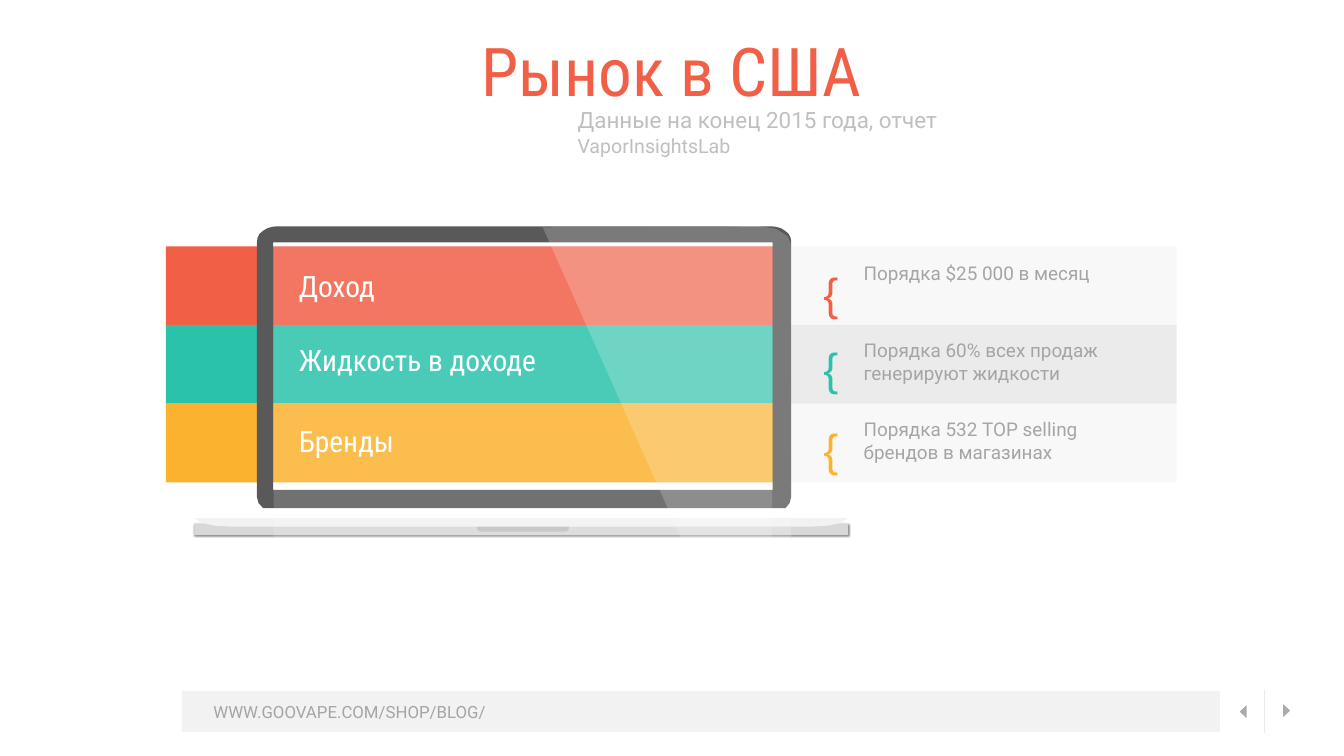
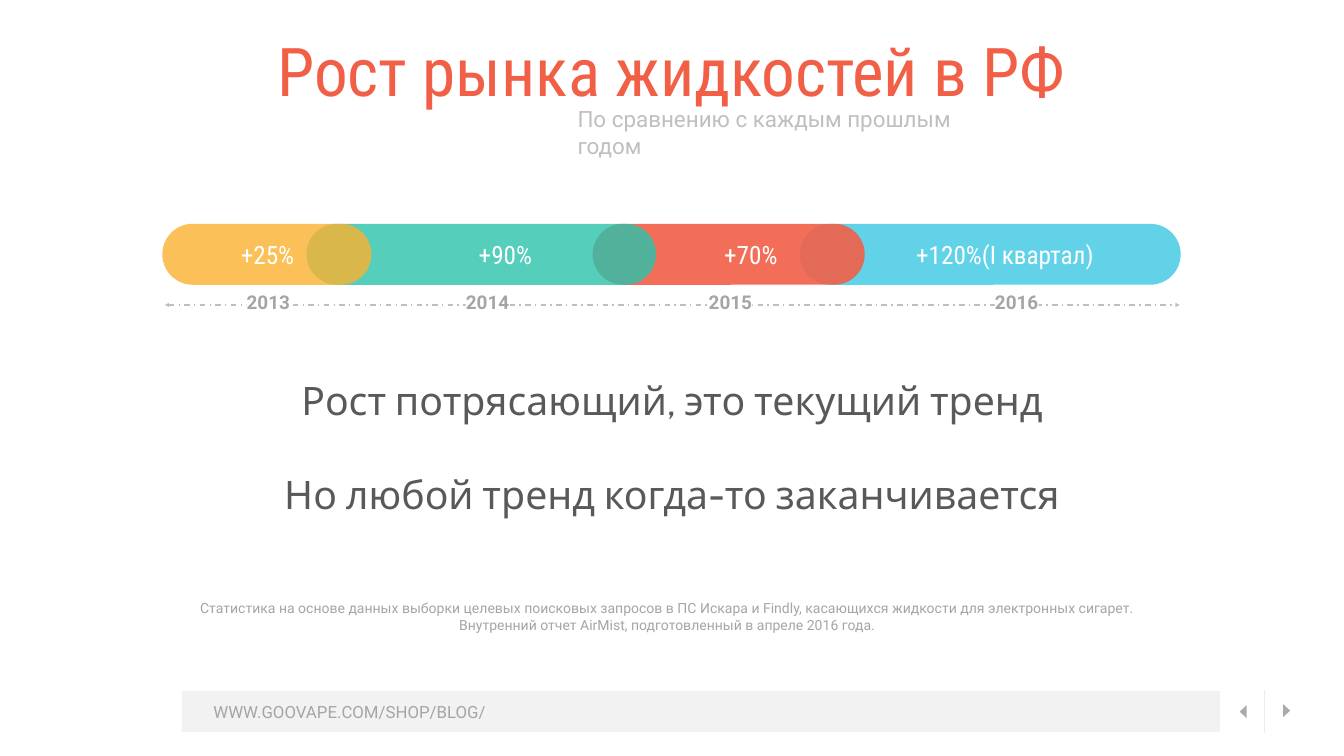
import math

from lxml import etree
from pptx import Presentation
from pptx.dml.color import RGBColor
from pptx.enum.dml import MSO_LINE
from pptx.enum.shapes import MSO_CONNECTOR, MSO_SHAPE
from pptx.enum.text import MSO_ANCHOR, PP_ALIGN
from pptx.oxml.ns import qn
from pptx.util import Inches, Pt

RECT = MSO_SHAPE.RECTANGLE
PILL = MSO_SHAPE.ROUNDED_RECTANGLE
OVAL = MSO_SHAPE.OVAL
TRIANGLE = MSO_SHAPE.ISOSCELES_TRIANGLE
NOTCH = MSO_SHAPE.ROUND_2_SAME_RECTANGLE
STRAIGHT = MSO_CONNECTOR.STRAIGHT
DASH_DOT = MSO_LINE.DASH_DOT
LEFT, CENTER = PP_ALIGN.LEFT, PP_ALIGN.CENTER
TOP, MIDDLE = MSO_ANCHOR.TOP, MSO_ANCHOR.MIDDLE


class Theme:
    coral, teal, amber, sky = "F15F47", "2BC2AC", "FBB22F", "3AC7E2"
    white, pale, silver, mist = "FFFFFF", "F2F2F2", "D8D8D8", "E6E6E6"
    rule, arrow, soft, muted, dark = "EBEBEB", "AAAAAA", "BFBFBF", "A5A5A5", "595959"
    camera = "A4A6A8"
    body, condensed, statement, symbol = "Roboto", "Roboto Condensed", "Cabin", "Arial"
    title_size, brace_size, statement_size = 96, 64, 56
    label_size, growth_size, subtitle_size, source_size = 42, 36, 32, 28
    detail_size, footer_size, note_size = 27, 24, 20


def paint(shape, color, opacity=100):
    """Give a shape a flat fill without outline or shadow; opacity is in percent."""
    shape.shadow.inherit = False
    shape.line.fill.background()
    shape.fill.solid()
    shape.fill.fore_color.rgb = RGBColor.from_string(color)
    if opacity < 100:
        tint = shape._element.spPr.find(".//" + qn("a:srgbClr"))
        etree.SubElement(tint, qn("a:alpha")).set("val", str(opacity * 1000))
    return shape


def write(shape, paragraphs, color, font=Theme.body, align=LEFT, anchor=MIDDLE,
          inset=0.06, gap=0, spacing=None):
    """Fill a shape with paragraphs, each a list of (text, size) runs."""
    frame = shape.text_frame
    frame.word_wrap = True
    frame.vertical_anchor = anchor
    frame.margin_left = frame.margin_right = Inches(inset)
    frame.margin_top = frame.margin_bottom = Inches(inset)
    for index, runs in enumerate(paragraphs):
        paragraph = frame.add_paragraph() if index else frame.paragraphs[0]
        paragraph.alignment = align
        if index:
            paragraph.space_before = Pt(gap)
        if spacing:
            paragraph.line_spacing = spacing
        for text, size in runs:
            run = paragraph.add_run()
            run.text = text
            run.font.size = Pt(size)
            run.font.name = font
            run.font.color.rgb = RGBColor.from_string(color)
    return frame


prs = Presentation()
prs.slide_width, prs.slide_height = Inches(26.67), Inches(15)

# Footer, title and subtitle of every slide
headings = [
    ("Рынок в США", 9.71, [("Данные на конец 2015 года, отчет ", Theme.subtitle_size),
                           ("VaporInsightsLab", Theme.source_size)]),
    ("Рост рынка жидкостей в РФ", 8.05,
     [("По сравнению с каждым прошлым годом", Theme.subtitle_size)]),
]
canvases = []
for title, subtitle_width, subtitle in headings:
    shapes = prs.slides.add_slide(prs.slide_layouts[6]).shapes
    canvases.append(shapes)
    paint(shapes.add_shape(RECT, Inches(3.61), Inches(13.71), Inches(20.6), Inches(0.81)),
          Theme.mist, 50)
    address = shapes.add_textbox(Inches(2.95), Inches(13.87), Inches(7.97), Inches(0.52))
    write(address, [[("WWW.GOOVAPE.COM/SHOP/BLOG/", Theme.footer_size)]],
          Theme.muted, align=CENTER)
    divider = shapes.add_connector(STRAIGHT, Inches(25.09), Inches(13.69),
                                   Inches(25.09), Inches(14.54))
    divider.line.color.rgb = RGBColor.from_string(Theme.rule)
    divider.line.width = Pt(2)
    etree.SubElement(divider._element.spPr, qn("a:effectLst"))
    for left, top, turn in [(24.54, 14.05, 270), (25.4, 14.03, 90)]:
        pager = shapes.add_shape(TRIANGLE, Inches(left), Inches(top),
                                 Inches(0.26), Inches(0.14))
        paint(pager, Theme.arrow).rotation = turn
    heading = shapes.add_textbox(Inches(4.56), Inches(0.52), Inches(17.54), Inches(1.73))
    write(heading, [[(title, Theme.title_size)]], Theme.coral, Theme.condensed, CENTER)
    subheading = shapes.add_textbox(Inches(11.4), Inches(2.29),
                                    Inches(subtitle_width), Inches(0.65))
    write(subheading, [subtitle], Theme.soft)

market, growth = canvases

# Slide 1: bands behind the laptop
BAND_TOP, BAND_HEIGHT = 4.89, 1.56
facts = [
    (Theme.coral, Theme.pale, "Доход", 5.26, "Порядка $25 000 в месяц", 5.19, 4.99),
    (Theme.teal, Theme.silver, "Жидкость в доходе", 6.72,
     "Порядка 60% всех продаж генерируют жидкости", 6.72, 6.49),
    (Theme.amber, Theme.pale, "Бренды", 8.33,
     "Порядка 532 TOP selling брендов в магазинах", 8.29, 8.09),
]
for row, (color, backdrop, *_) in enumerate(facts):
    top = Inches(BAND_TOP + row * BAND_HEIGHT)
    for left, width, fill, opacity in [(15.6, 7.75, backdrop, 50), (3.29, 12.33, color, 100)]:
        paint(market.add_shape(RECT, Inches(left), top, Inches(width), Inches(BAND_HEIGHT)),
              fill, opacity)

# Laptop: base with its shadow, camera, notch, then the outlined parts
base = paint(market.add_shape(RECT, Inches(3.86), Inches(10.39), Inches(12.97), Inches(0.23)),
             Theme.silver)
effects = base._element.spPr.find(qn("a:effectLst"))
shadow = etree.SubElement(effects, qn("a:outerShdw"), blurRad=str(Pt(3)),
                          dist=str(Pt(1)), dir="5400000")
shadow_color = etree.SubElement(shadow, qn("a:srgbClr"), val="000000")
etree.SubElement(shadow_color, qn("a:alpha"), val="50000")

paint(market.add_shape(OVAL, Inches(10.39), Inches(4.64), Inches(0.11), Inches(0.11)),
      Theme.camera)
notch = paint(market.add_shape(NOTCH, Inches(9.46), Inches(10.39), Inches(1.83), Inches(0.16)),
              Theme.soft)
notch.adjustments[0], notch.adjustments[1] = 0, 0.5

quarter = [math.radians(step * 15) for step in range(7)]
right_corner = [(15.3 + 0.4 * math.sin(a), 4.8 - 0.31 * math.cos(a)) for a in quarter]
left_corner = [(5.5 - 0.4 * math.cos(a), 4.8 - 0.31 * math.sin(a)) for a in quarter]
lid = left_corner + right_corner + [(15.7, 9.86), (15.67, 9.98), (15.59, 10.08),
                                    (5.22, 10.08), (5.13, 9.98), (5.1, 9.86)]
screen = [(5.42, 4.81), (5.42, 9.72), (15.33, 9.72), (15.33, 4.81)]
lip = [(3.86, 10.28), (4.0, 10.37), (4.25, 10.43), (4.61, 10.45),
       (16.08, 10.45), (16.44, 10.43), (16.69, 10.37), (16.83, 10.28)]
glare = [(10.77, 4.51), (14.4, 4.5), (14.99, 4.48), (15.4, 4.54), (15.63, 4.69),
         (15.72, 4.9), (15.7, 10.89), (15.67, 11.35), (15.52, 11.45), (13.86, 11.45)]
for contours, color, opacity in [([lid, screen], Theme.dark, 100),
                                 ([lip], Theme.pale, 100), ([glare], Theme.white, 20)]:
    outline = None
    for contour in contours:
        (x, y), *rest = [(x * 100, y * 100) for x, y in contour]
        if outline is None:
            outline = market.build_freeform(x, y, scale=Inches(0.01))
        else:
            outline.move_to(x, y)
        outline.add_line_segments(rest, close=True)
    paint(outline.convert_to_shape(), color, opacity)
paint(market.add_shape(RECT, Inches(5.43), Inches(4.89), Inches(9.89), Inches(6.24)),
      Theme.white, 15)

# Labels on the screen, braces and details beside it
for color, _, label, label_top, detail, detail_top, brace_top in facts:
    label_box = market.add_textbox(Inches(5.87), Inches(label_top), Inches(5.59), Inches(0.82))
    write(label_box, [[(label, Theme.label_size)]], Theme.white, Theme.condensed)
    detail_box = market.add_textbox(Inches(17.14), Inches(detail_top), Inches(5.6), Inches(0.91))
    write(detail_box, [[(detail, Theme.detail_size)]], Theme.muted, anchor=TOP, inset=0)
    brace = market.add_textbox(Inches(16.28), Inches(brace_top), Inches(0.45), Inches(1.4))
    write(brace, [[("{", Theme.brace_size)]], color, Theme.symbol, spacing=1.2)

# Slide 2: timeline of growth
axis = growth.add_connector(STRAIGHT, Inches(3.27), Inches(6.05), Inches(23.41), Inches(6.05))
axis.line.color.rgb = RGBColor.from_string(Theme.soft)
axis.line.width = Pt(2)
axis.line.dash_style = DASH_DOT
for end in ("a:headEnd", "a:tailEnd"):
    etree.SubElement(axis.line._get_or_add_ln(), qn(end), type="triangle")
etree.SubElement(axis._element.spPr, qn("a:effectLst"))

periods = [
    ("2013", 4.89, "+25%", 4.78, 3.22, 4.15, Theme.amber, 80),
    ("2014", 9.24, "+90%", 9.5, 6.08, 6.94, Theme.teal, 80),
    ("2015", 14.06, "+70%", 14.37, 11.76, 5.4, Theme.coral, 90),
    ("2016", 19.74, "+120%(I квартал)", 18.18, 15.87, 7.56, Theme.sky, 80),
]
for *_, left, width, color, opacity in reversed(periods):
    bar = growth.add_shape(PILL, Inches(left), Inches(4.44), Inches(width), Inches(1.21))
    paint(bar, color, opacity).adjustments[0] = 0.5
for year, year_left, rate, rate_left, *_ in periods:
    rate_box = growth.add_textbox(Inches(rate_left), Inches(4.75), Inches(4.22), Inches(0.61))
    write(rate_box, [[(rate, Theme.growth_size)]], Theme.white, Theme.condensed,
          anchor=TOP, inset=0)
    year_tag = growth.add_shape(RECT, Inches(year_left), Inches(5.76), Inches(0.87), Inches(0.45))
    year_text = write(paint(year_tag, Theme.white), [[(year, Theme.detail_size)]],
                      Theme.muted, align=CENTER, anchor=TOP, inset=0)
    year_text.paragraphs[0].runs[0].font.bold = True

note = growth.add_textbox(Inches(3.4), Inches(11.84), Inches(19.68), Inches(0.79))
write(note, [[("Статистика на основе данных выборки целевых поисковых запросов в ПС Искара "
               "и Findly, касающихся жидкости для электронных сигарет. Внутренний отчет "
               "AirMist, подготовленный в апреле 2016 года.", Theme.note_size)]],
      Theme.muted, align=CENTER)
conclusion = growth.add_textbox(Inches(5.17), Inches(7.41), Inches(16.33), Inches(2.93))
write(conclusion, [[("Рост потрясающий, это текущий тренд", Theme.statement_size)],
                   [("Но любой тренд когда-то заканчивается", Theme.statement_size)]],
      Theme.dark, Theme.statement, CENTER, TOP, inset=0.05, gap=67)

prs.save("out.pptx")
